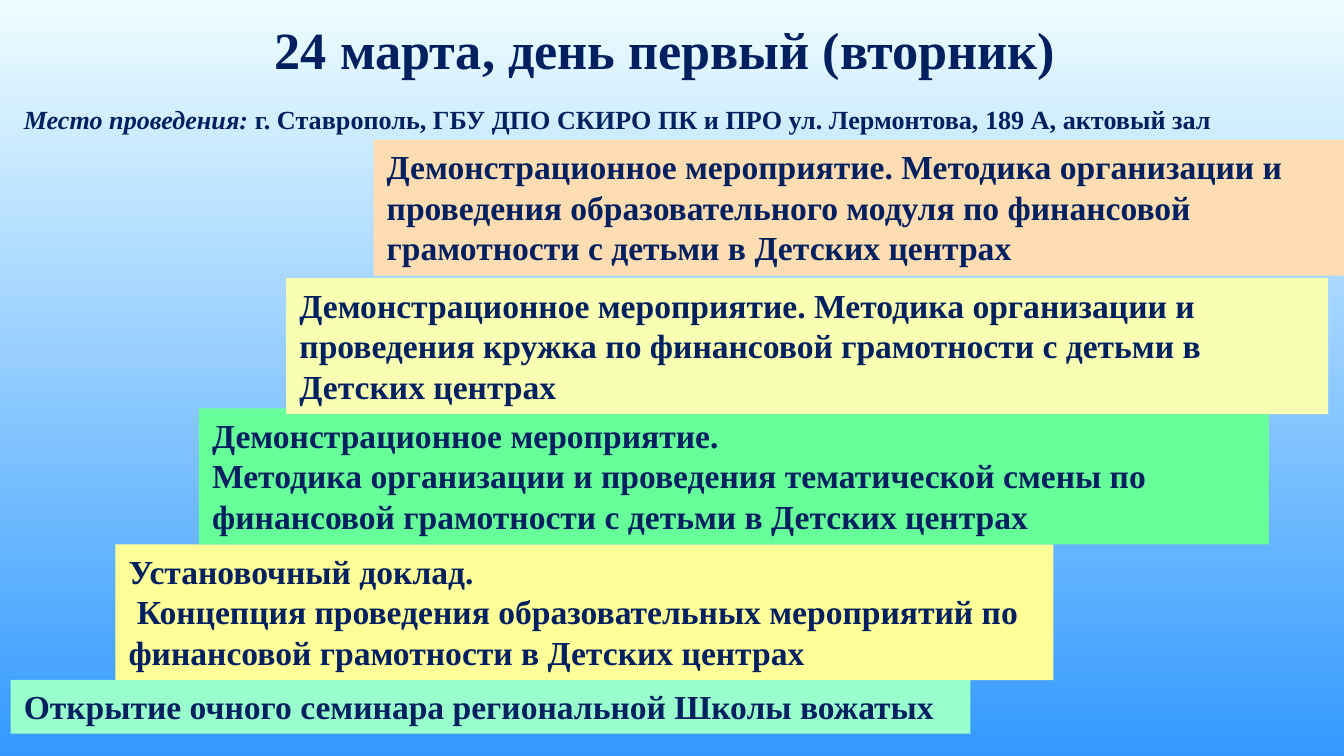
from pptx import Presentation
from pptx.dml.color import RGBColor
from pptx.enum.shapes import MSO_SHAPE
from pptx.enum.text import MSO_ANCHOR, MSO_AUTO_SIZE, PP_ALIGN
from pptx.util import Cm, Pt

COLORS = {
    "text": "002060",
    "sky_top": "EEFDFF",
    "sky_bottom": "3399FF",
    "mint": "99FFCC",
    "yellow": "FFFF99",
    "green": "66FF99",
    "lemon": "F8FFB3",
    "peach": "FFDDB3",
}
FONT = "Times New Roman"
DEMO = "Демонстрационное мероприятие."

# Steps from the bottom up: left, top, width, height in cm, colour, paragraphs
STEPS = [
    (0.2, 12.85, 18.14, 1.02, "mint",
     ["Открытие очного семинара региональной Школы вожатых"]),
    (2.18, 10.29, 17.73, 2.57, "yellow",
     ["Установочный доклад.",
      " Концепция проведения образовательных мероприятий по финансовой "
      "грамотности в Детских центрах"]),
    (3.76, 7.72, 20.22, 2.57, "green",
     [DEMO,
      "Методика организации и проведения тематической смены по финансовой "
      "грамотности с детьми в Детских центрах"]),
    (5.41, 5.26, 19.69, 2.57, "lemon",
     [f"{DEMO} Методика организации и проведения кружка по финансовой "
      "грамотности с детьми в Детских центрах"]),
    (7.06, 2.64, 18.52, 2.57, "peach",
     [f"{DEMO} Методика организации и проведения образовательного модуля по "
      "финансовой грамотности с детьми в Детских центрах"]),
]


def rgb(name):
    return RGBColor.from_string(COLORS[name])


def paint_background(slide):
    fill = slide.background.fill
    fill.gradient()
    fill.gradient_angle = 270
    for stop, name in zip(fill.gradient_stops, ("sky_top", "sky_bottom")):
        stop.color.rgb = rgb(name)


def write_paragraphs(box, paragraphs, size, align, wrap=True):
    """Each paragraph is a list of (text, italic) spans."""
    frame = box.text_frame
    frame.word_wrap = wrap
    frame.auto_size = MSO_AUTO_SIZE.SHAPE_TO_FIT_TEXT
    frame.vertical_anchor = MSO_ANCHOR.TOP
    for index, spans in enumerate(paragraphs):
        para = frame.add_paragraph() if index else frame.paragraphs[0]
        para.alignment = align
        para.font.name = FONT
        para.font.size = Pt(size)
        para.font.bold = True
        para.font.color.rgb = rgb("text")
        for text, italic in spans:
            span = para.add_run()
            span.text = text
            if italic:
                span.font.italic = True


def add_text(slide, place, spans, size, align, wrap=True):
    box = slide.shapes.add_textbox(*map(Cm, place))
    write_paragraphs(box, [spans], size, align, wrap)


def add_step(slide, left, top, width, height, color, lines):
    box = slide.shapes.add_shape(
        MSO_SHAPE.RECTANGLE, Cm(left), Cm(top), Cm(width), Cm(height))
    box.shadow.inherit = False
    box.fill.solid()
    box.fill.fore_color.rgb = rgb(color)
    box.line.fill.background()
    write_paragraphs(box, [[(line, False)] for line in lines], 18, PP_ALIGN.LEFT)


def main():
    deck = Presentation()
    deck.slide_width, deck.slide_height = Cm(25.4), Cm(14.29)
    page = deck.slides.add_slide(deck.slide_layouts[6])
    paint_background(page)

    # Heading and venue
    add_text(page, (4.83, 0.2, 15.47, 1.45),
             [("24 марта, день первый (вторник)", False)],
             28, PP_ALIGN.CENTER, wrap=False)
    add_text(page, (0.2, 1.83, 24.92, 0.86),
             [("Место проведения:", True),
              (" г. Ставрополь, ГБУ ДПО СКИРО ПК и ПРО ул. Лермонтова, 189 А, "
               "актовый зал", False)],
             14, PP_ALIGN.JUSTIFY)

    # Staircase of events
    for step in STEPS:
        add_step(page, *step)

    deck.save("out.pptx")


if __name__ == "__main__":
    main()
